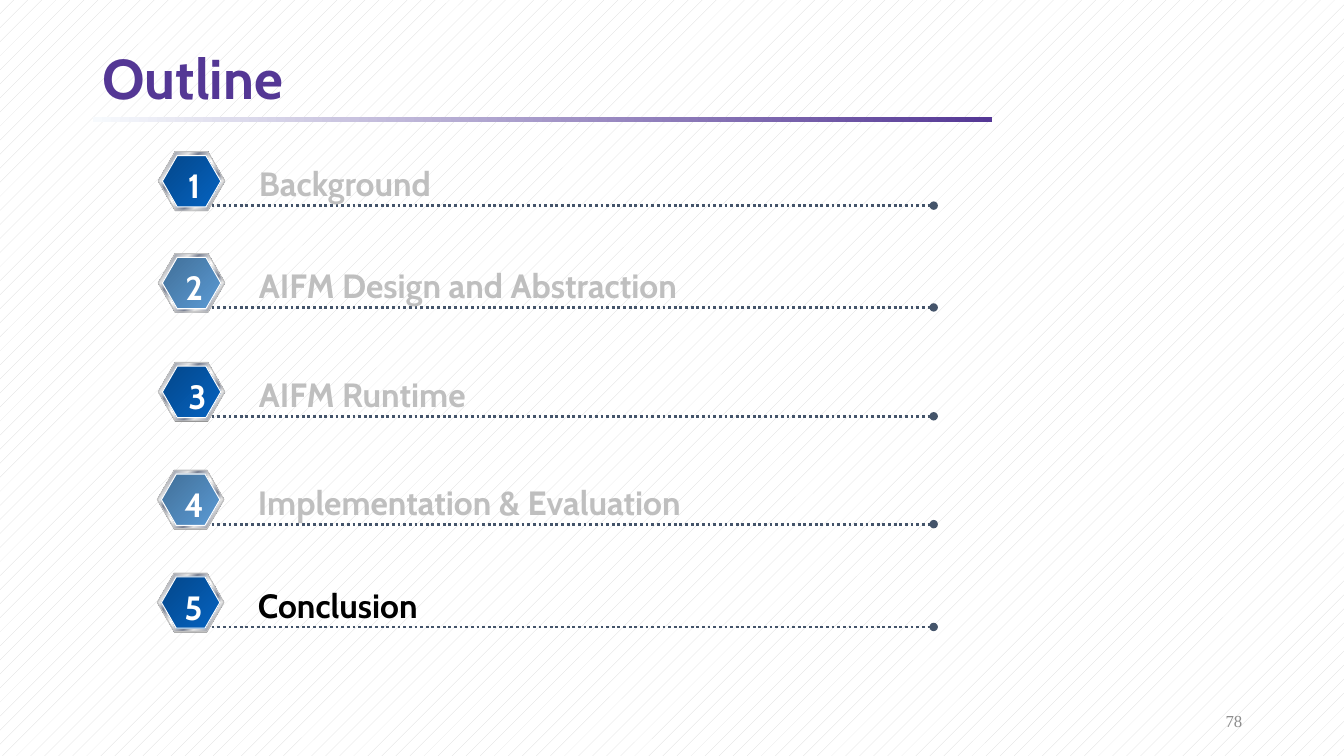
from dataclasses import dataclass

from lxml.etree import SubElement
from pptx import Presentation
from pptx.dml.color import RGBColor
from pptx.enum.dml import MSO_LINE, MSO_PATTERN
from pptx.enum.shapes import MSO_CONNECTOR, MSO_SHAPE
from pptx.enum.text import MSO_ANCHOR, MSO_AUTO_SIZE, PP_ALIGN
from pptx.oxml.ns import qn
from pptx.util import Inches, Pt

WIDE, HIGH = Inches(13.33), Inches(7.5)
COL, ROW = WIDE / 100, HIGH / 100

HEX = {
    "purple": "543795", "mist": "F7FAFD", "page": "8C8C8C",
    "dim": "BFBFBF", "black": "000000", "white": "FFFFFF",
    "shade": "808080", "rim": "C0C0C0", "slate": "44546A", "dots": "D9D9D9",
    "light": "E6E6E6", "steel": "7D8496",
    "navy": "04478A", "blue": "0563C1", "dusk": "416F98", "sky": "5B9BD5",
}

Stops = list[tuple[int, str]]
METAL: Stops = [
    (0, "light"), (7, "steel"), (26, "light"), (34, "steel"), (46, "light"),
    (50, "white"), (54, "light"), (66, "steel"), (74, "light"),
    (93, "steel"), (100, "light"),
]
DEEP: Stops = [(0, "navy"), (100, "blue")]
SOFT: Stops = [(0, "dusk"), (100, "sky")]
FADE: Stops = [(0, "mist"), (100, "purple")]

FIT = {"word_wrap": False, "auto_size": MSO_AUTO_SIZE.SHAPE_TO_FIT_TEXT}
MID = {"word_wrap": True, "vertical_anchor": MSO_ANCHOR.MIDDLE}
BOLD = {"name": "Cabin", "size": Pt(24), "bold": True}
HEAD = BOLD | {"size": Pt(40)}
FOOT = {"name": "Times New Roman", "size": Pt(12)}


@dataclass
class Box:
    col: float
    row: float
    cols: float
    rows: float

    def emu(self) -> list[int]:
        return [int(self.col * COL), int(self.row * ROW),
                int(self.cols * COL), int(self.rows * ROW)]


@dataclass
class Topic:
    base: float
    text: str
    cols: float
    tone: str = "dim"
    shift: float = 0
    nudge: float = 0


TOPICS = [
    Topic(27.2, "Background", 15.6),
    Topic(40.67, "AIFM Design and Abstraction", 36.23),
    Topic(55.07, "AIFM Runtime", 18.98, nudge=0.22),
    Topic(69.33, "Implementation & Evaluation", 36.38, shift=-0.07),
    Topic(82.93, "Conclusion", 14.55, "black", -0.07),
]


def tint(name: str) -> RGBColor:
    return RGBColor.from_string(HEX[name])


def apply(item, form: dict) -> None:
    for key, value in form.items():
        setattr(item, key, value)


def blend(shape, stops: Stops, angle: int) -> None:
    shape.fill.gradient()
    shape.fill.gradient_angle = angle
    ramp = shape._element.spPr.find(".//" + qn("a:gsLst"))
    for old in list(ramp):
        ramp.remove(old)
    for pos, name in stops:
        stop = SubElement(ramp, qn("a:gs"), pos=str(pos * 1000))
        SubElement(stop, qn("a:srgbClr"), val=HEX[name])


def write(slide, box: Box, text: str, tone: str, font: dict, frame: dict,
          para: dict) -> None:
    body = slide.shapes.add_textbox(*box.emu()).text_frame
    apply(body, frame)
    line = body.paragraphs[0]
    apply(line, para)
    run = line.add_run()
    run.text = text
    apply(run.font, font)
    run.font.color.rgb = tint(tone)


def plate(group, box: Box, fill: str | Stops, edge: str = "") -> None:
    shape = group.shapes.add_shape(MSO_SHAPE.HEXAGON, *box.emu())
    shape.shadow.inherit = False
    shape.adjustments[0] = 0.289
    shape.adjustments[1] = 1.155
    if isinstance(fill, str):
        shape.fill.solid()
        shape.fill.fore_color.rgb = tint(fill)
    else:
        blend(shape, fill, 315)
    if edge:
        shape.line.color.rgb = tint(edge)
        shape.line.width = Pt(0.75)
    else:
        shape.line.fill.background()


def badge(slide, topic: Topic, core: Stops) -> None:
    group = slide.shapes.add_group_shape()
    left, base = 11.78 + topic.shift, topic.base
    plate(group, Box(left, base - 7, 4.95, 7.73), "shade")
    plate(group, Box(left, base - 7.13, 4.95, 7.73), METAL, "rim")
    plate(group, Box(left + 0.3, base - 6.63, 4.35, 6.8), core, "white")


def trail(slide, base: float) -> None:
    y = int(base * ROW)
    line = slide.shapes.add_connector(
        MSO_CONNECTOR.STRAIGHT, int(15.75 * COL), y, int(69.47 * COL), y)
    line.line.color.rgb = tint("slate")
    apply(line.line, {"width": Pt(2), "dash_style": MSO_LINE.ROUND_DOT})
    props = line._element.spPr
    SubElement(props.find(qn("a:ln")), qn("a:tailEnd"), type="oval")
    SubElement(props, qn("a:effectLst"))


def entry(slide, rank: int, topic: Topic) -> None:
    badge(slide, topic, DEEP if rank % 2 else SOFT)
    trail(slide, topic.base)
    label = Box(18.53 + topic.shift, topic.base - 6.27, topic.cols, 6.67)
    write(slide, label, topic.text, topic.tone, BOLD, FIT, {})
    digit = Box(13.05 + topic.shift + topic.nudge, topic.base - 6, 2.78, 6.67)
    write(slide, digit, str(rank), "white", BOLD, FIT,
          {"alignment": PP_ALIGN.CENTER})


def main() -> None:
    deck = Presentation()
    apply(deck, {"slide_width": WIDE, "slide_height": HIGH})
    slide = deck.slides.add_slide(deck.slide_layouts[6])

    back = slide.background.fill
    back.patterned()
    back.pattern = MSO_PATTERN.PERCENT_5
    back.fore_color.rgb = tint("dots")
    back.back_color.rgb = tint("white")

    rule = slide.shapes.add_shape(
        MSO_SHAPE.RECTANGLE, *Box(6.9, 15.47, 66.92, 0.7).emu())
    rule.shadow.inherit = False
    rule.line.fill.background()
    blend(rule, FADE, 0)

    write(slide, Box(6.9, 5.73, 86.27, 10), "Outline", "purple", HEAD, MID,
          {"line_spacing": 0.9})
    for rank, topic in enumerate(TOPICS, 1):
        entry(slide, rank, topic)
    write(slide, Box(70.67, 92.67, 22.5, 5.33), "78", "page", FOOT, MID,
          {"alignment": PP_ALIGN.RIGHT})

    deck.save("out.pptx")


if __name__ == "__main__":
    main()
